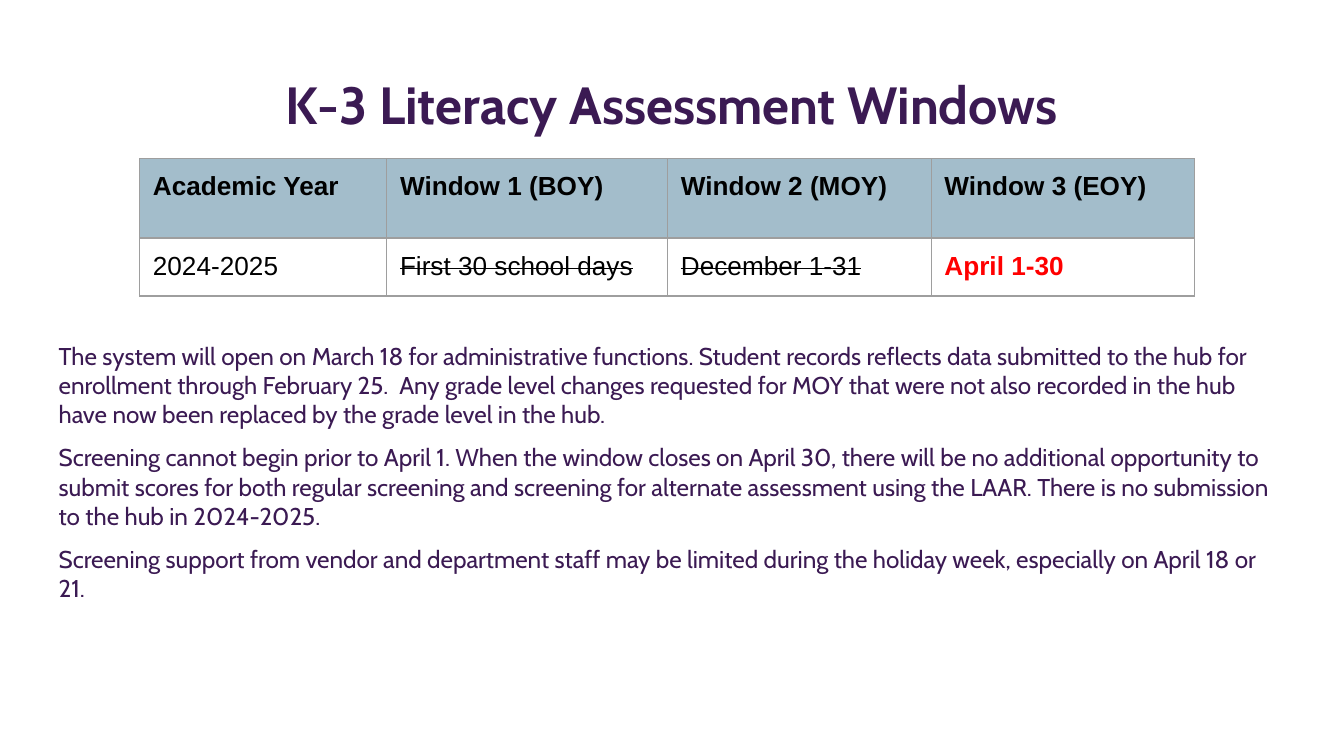
from lxml.etree import SubElement
from pptx import Presentation
from pptx.dml.color import RGBColor
from pptx.enum.text import MSO_ANCHOR, PP_ALIGN
from pptx.oxml.ns import qn
from pptx.util import Cm, Pt

COLORS = {
    "purple": "3B1A53",
    "header": "A3BDCB",
    "border": "9E9E9E",
    "black": "000000",
    "red": "FF0000",
}
INSET = Cm(0.25)


def style_font(font, name, size, color, bold=False):
    font.name = name
    font.size = Pt(size)
    font.bold = bold
    font.color.rgb = RGBColor.from_string(COLORS[color])


def add_text(slide, top, height, anchor):
    box = slide.shapes.add_textbox(Cm(0.86), top, Cm(23.67), height)
    text_frame = box.text_frame
    text_frame.word_wrap = True
    text_frame.vertical_anchor = anchor
    text_frame.margin_left = text_frame.margin_right = INSET
    text_frame.margin_top = text_frame.margin_bottom = INSET
    return text_frame


presentation = Presentation()
presentation.slide_width = Cm(25.4)
presentation.slide_height = Cm(14.29)
slide = presentation.slides.add_slide(presentation.slide_layouts[6])

# Title
title = add_text(slide, Cm(1.24), Cm(1.6), MSO_ANCHOR.MIDDLE)
title.text = "K-3 Literacy Assessment Windows"
paragraph = title.paragraphs[0]
paragraph.alignment = PP_ALIGN.CENTER
paragraph.line_spacing = 0.9
style_font(paragraph.runs[0].font, "Cabin", 28, "purple", bold=True)

# Notes on the screening window
notes = [
    "The system will open on March 18 for administrative functions. Student records "
    "reflects data submitted to the hub for enrollment through February 25.  Any grade "
    "level changes requested for MOY that were not also recorded in the hub have now "
    "been replaced by the grade level in the hub.",
    "Screening cannot begin prior to April 1. When the window closes on April 30, there "
    "will be no additional opportunity to submit scores for both regular screening and "
    "screening for alternate assessment using the LAAR. There is no submission to "
    "the hub in 2024-2025.",
    "Screening support from vendor and department staff may be limited during the "
    "holiday week, especially on April 18 or 21.",
]
body = add_text(slide, Cm(6.2), Cm(5.56), MSO_ANCHOR.TOP)
body.text = "\n".join(notes)
for index, paragraph in enumerate(body.paragraphs):
    if index:
        paragraph.space_before = Pt(7.5)
    style_font(paragraph.runs[0].font, "Cabin", 13, "purple")

# Assessment window table
rows = [
    ["Academic Year", "Window 1 (BOY)", "Window 2 (MOY)", "Window 3 (EOY)"],
    ["2024-2025", "First 30 school days", "December 1-31", "April 1-30"],
]
closed_windows = rows[1][1:3]
open_window = rows[1][3]
column_widths = [4.67, 5.31, 4.98, 4.98]
row_heights = [1.5, 1.07]

table = slide.shapes.add_table(
    len(rows), len(column_widths), Cm(2.64), Cm(3),
    Cm(sum(column_widths)), Cm(sum(row_heights)),
).table
for column, width in zip(table.columns, column_widths):
    column.width = Cm(width)

for row_index, (texts, height) in enumerate(zip(rows, row_heights)):
    table.rows[row_index].height = Cm(height)
    is_header = row_index == 0
    for column_index, text in enumerate(texts):
        cell = table.cell(row_index, column_index)
        cell.text_frame.text = text
        cell.margin_left = cell.margin_right = INSET
        cell.margin_top = cell.margin_bottom = INSET

        is_open = text == open_window
        run = cell.text_frame.paragraphs[0].runs[0]
        style_font(run.font, "Arial", 14, "red" if is_open else "black",
                   bold=is_header or is_open)
        if text in closed_windows:
            run.font._element.set("strike", "sngStrike")

        # Borders come before the fill in the cell properties
        properties = cell._tc.get_or_add_tcPr()
        for side in ("a:lnL", "a:lnR", "a:lnT", "a:lnB"):
            line = SubElement(properties, qn(side), w=str(Pt(0.75)))
            fill = SubElement(line, qn("a:solidFill"))
            SubElement(fill, qn("a:srgbClr"), val=COLORS["border"])
        if is_header:
            cell.fill.solid()
            cell.fill.fore_color.rgb = RGBColor.from_string(COLORS["header"])
        else:
            cell.fill.background()

presentation.save("out.pptx")
